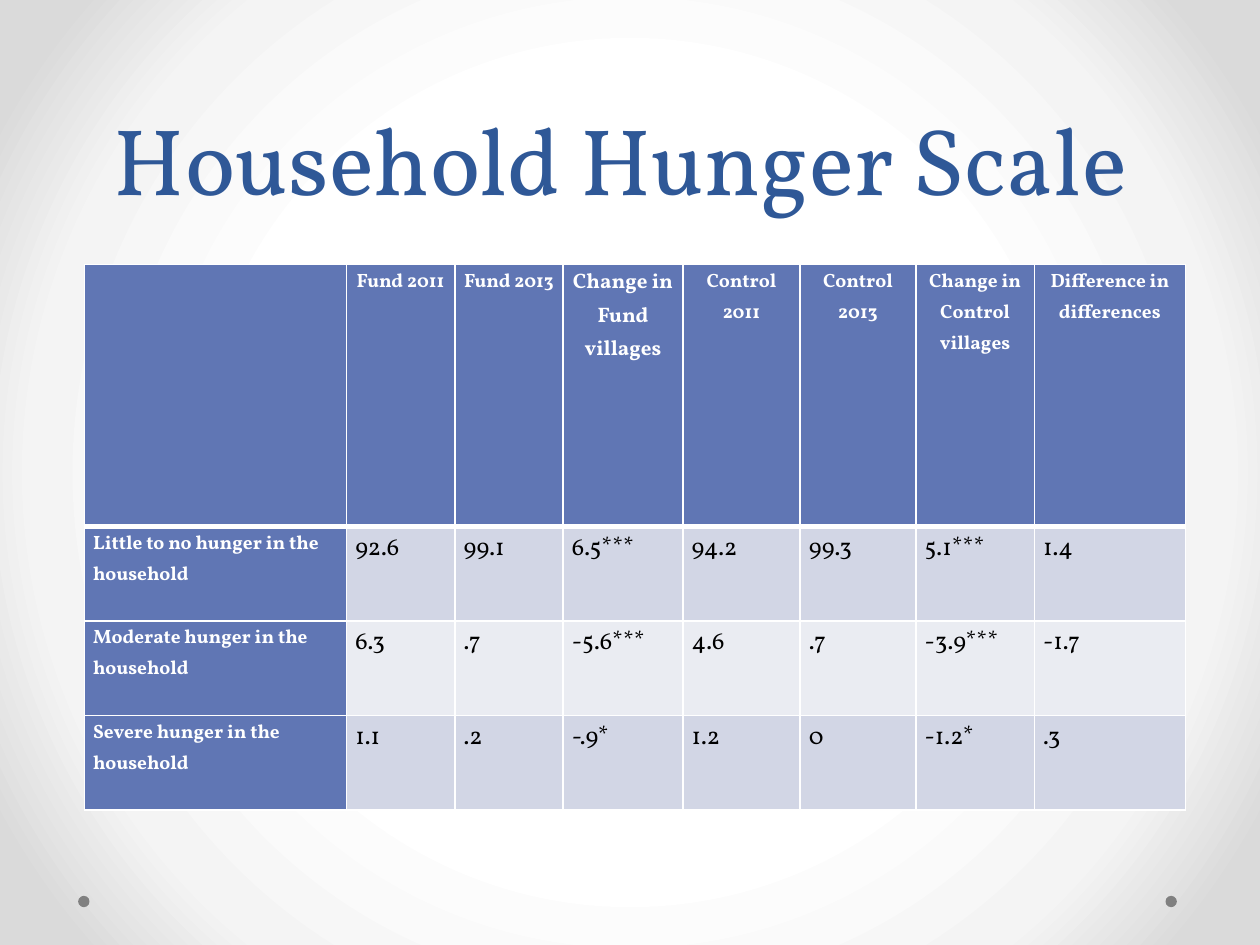
import pptx
import pptx.dml.color
import pptx.enum.shapes
import pptx.enum.text
import pptx.oxml
import pptx.oxml.ns
import pptx.util

WIDE, HIGH = pptx.util.Inches(10), pptx.util.Inches(7.5)
ALIGN = pptx.enum.text.PP_ALIGN
ANCHOR = pptx.enum.text.MSO_ANCHOR
NS = pptx.oxml.ns.nsdecls("a", "p")
BLUE, WHITE = "6076B4", "FFFFFF"
BANDS = ["D2D6E5", "EAECF2"]
COLS = [20.8, 8.6, 8.6, 9.5, 9.3, 9.2, 9.4, 12]
ROWS = [27.73, 10, 10, 10]
HEADS = ["", "Fund 2011", "Fund 2013", "Change in Fund villages", "Control 2011",
         "Control 2013", "Change in Control villages", "Difference in differences"]
DATA = [
    ["Little to no hunger in the household", "92.6", "99.1", "6.5***", "94.2", "99.3", "5.1***", "1.4"],
    ["Moderate hunger in the household", "6.3", ".7", "-5.6***", "4.6", ".7", "-3.9***", "-1.7"],
    ["Severe hunger in the household", "1.1", ".2", "-.9*", "1.2", "0", "-1.2*", ".3"],
]


def across(share):
    """Turn a percentage of the slide width into a length."""
    return round(WIDE * share / 100)


def down(share):
    """Turn a percentage of the slide height into a length."""
    return round(HIGH * share / 100)


def box(left, top, width, height):
    """Turn percentages of the slide into a position and a size."""
    return across(left), down(top), across(width), down(height)


def paint(target, color):
    """Give a fill or a font a solid colour from a hex string."""
    if hasattr(target, "solid"):
        target.solid()
        target = target.fore_color
    else:
        target = target.color
    target.rgb = pptx.dml.color.RGBColor.from_string(color)


def write(frame, text, size=11, color=WHITE, bold=False, align=ALIGN.LEFT, line=1.15, gap=0):
    """Write one formatted paragraph into a text frame."""
    para = frame.paragraphs[0]
    para.alignment, para.line_spacing = align, line
    para.space_before = para.space_after = pptx.util.Pt(gap)
    run = para.add_run()
    run.text = text
    run.font.name, run.font.size, run.font.bold = "Vollkorn", pptx.util.Pt(size), bold
    paint(run.font, color)


def shade(slide):
    """Set the radial grey background."""
    stops = "".join(
        f'<a:gs pos="{at * 1000}"><a:srgbClr val="{color}"/></a:gs>'
        for at, color in [(50, "FFFFFF"), (76, "F4F4F4"), (92, "DADADA")])
    ground = pptx.oxml.parse_xml(
        f'<p:bg {NS}><p:bgPr><a:gradFill rotWithShape="1"><a:gsLst>{stops}</a:gsLst>'
        '<a:path path="circle"><a:fillToRect l="50000" t="50000" r="50000" b="50000"/></a:path>'
        '</a:gradFill><a:effectLst/></p:bgPr></p:bg>')
    slide._element.cSld.insert(0, ground)


def dot(slide, left):
    """Draw one small grey footer dot."""
    shape = slide.shapes.add_shape(
        pptx.enum.shapes.MSO_SHAPE.OVAL, *box(left, 94.8, 0.9, 1.2))
    shape.shadow.inherit = False
    paint(shape.fill, "808080")
    shape.line.fill.background()


def title(slide, text):
    """Add the centred title."""
    frame = slide.shapes.add_textbox(*box(5, 0, 90, 23.33)).text_frame
    frame.word_wrap, frame.vertical_anchor = True, ANCHOR.BOTTOM
    write(frame, text, size=54, color="2F5897", align=ALIGN.CENTER, line=pptx.util.Pt(58))


def edge(cell, **widths):
    """Draw white cell borders with widths in points."""
    for side in "LRTB":
        width = pptx.util.Pt(widths.get(side, 1))
        cell._tc.get_or_add_tcPr().append(pptx.oxml.parse_xml(
            f'<a:ln{side} {NS} w="{width}"><a:solidFill><a:srgbClr val="{WHITE}"/>'
            f'</a:solidFill></a:ln{side}>'))


def style(row, col):
    """Choose the text format of a table cell."""
    if row == 0:
        large, tight = col == 3, col in (3, 6, 7)
        return dict(size=12 if large else 11, bold=True, align=ALIGN.CENTER, gap=0 if tight else 6)
    if col == 0:
        return dict(bold=True, gap=2)
    return dict(size=14, color="000000", gap=6)


def grid(slide):
    """Add the table of hunger figures."""
    table = slide.shapes.add_table(
        len(ROWS), len(COLS), *box(6.7, 28, sum(COLS), sum(ROWS))).table
    for col, share in zip(table.columns, COLS):
        col.width = across(share)
    for row, share in zip(table.rows, ROWS):
        row.height = down(share)
    for y, texts in enumerate([HEADS] + DATA):
        for x, text in enumerate(texts):
            cell = table.cell(y, x)
            cell.margin_left = cell.margin_right = pptx.util.Inches(0.07)
            cell.margin_top = cell.margin_bottom = 0
            edge(cell, **{0: {"B": 3}, 1: {"T": 3}}.get(y, {}))
            paint(cell.fill, BLUE if x == 0 or y == 0 else BANDS[(y - 1) % 2])
            if text:
                write(cell.text_frame, text, **style(y, x))


def main():
    """Build and save the slide."""
    deck = pptx.Presentation()
    deck.slide_width, deck.slide_height = WIDE, HIGH
    slide = deck.slides.add_slide(deck.slide_layouts[6])
    shade(slide)
    for left in (92.5, 6.2):
        dot(slide, left)
    title(slide, "Household Hunger Scale ")
    grid(slide)
    deck.save("out.pptx")


if __name__ == "__main__":
    main()
